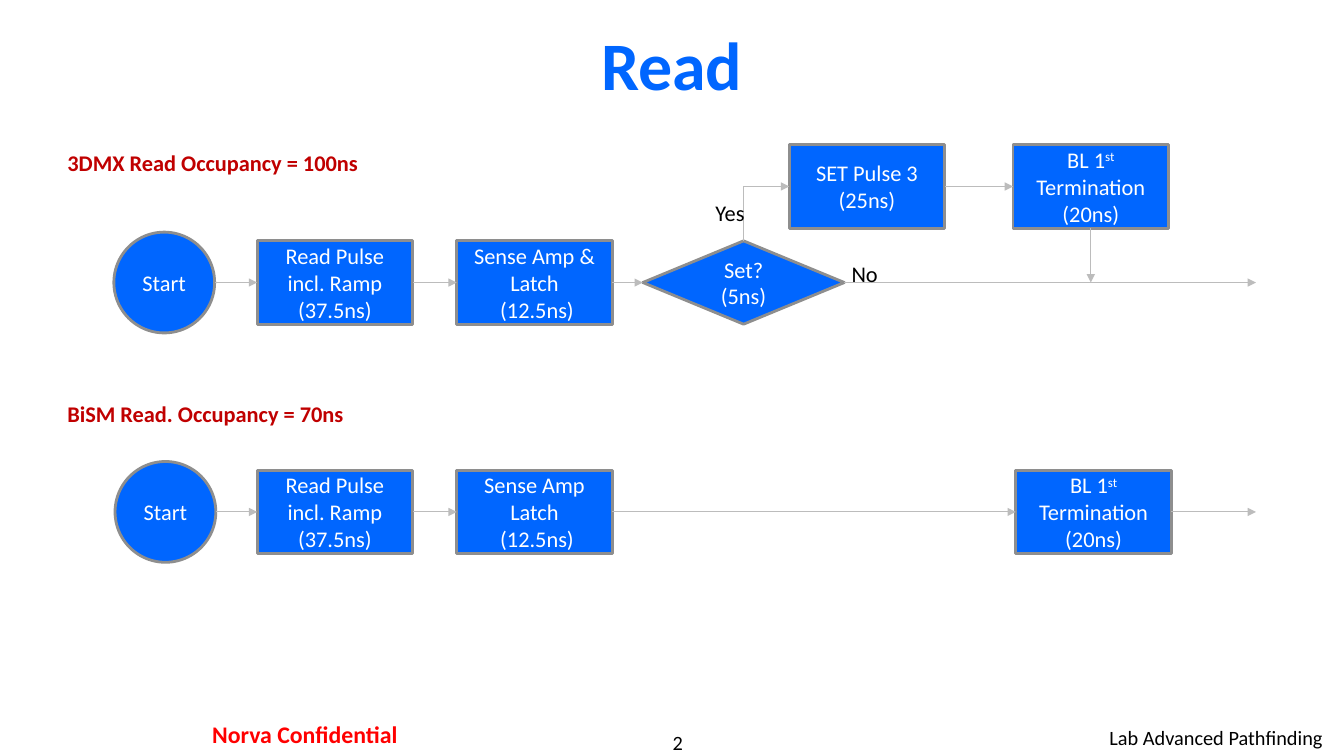
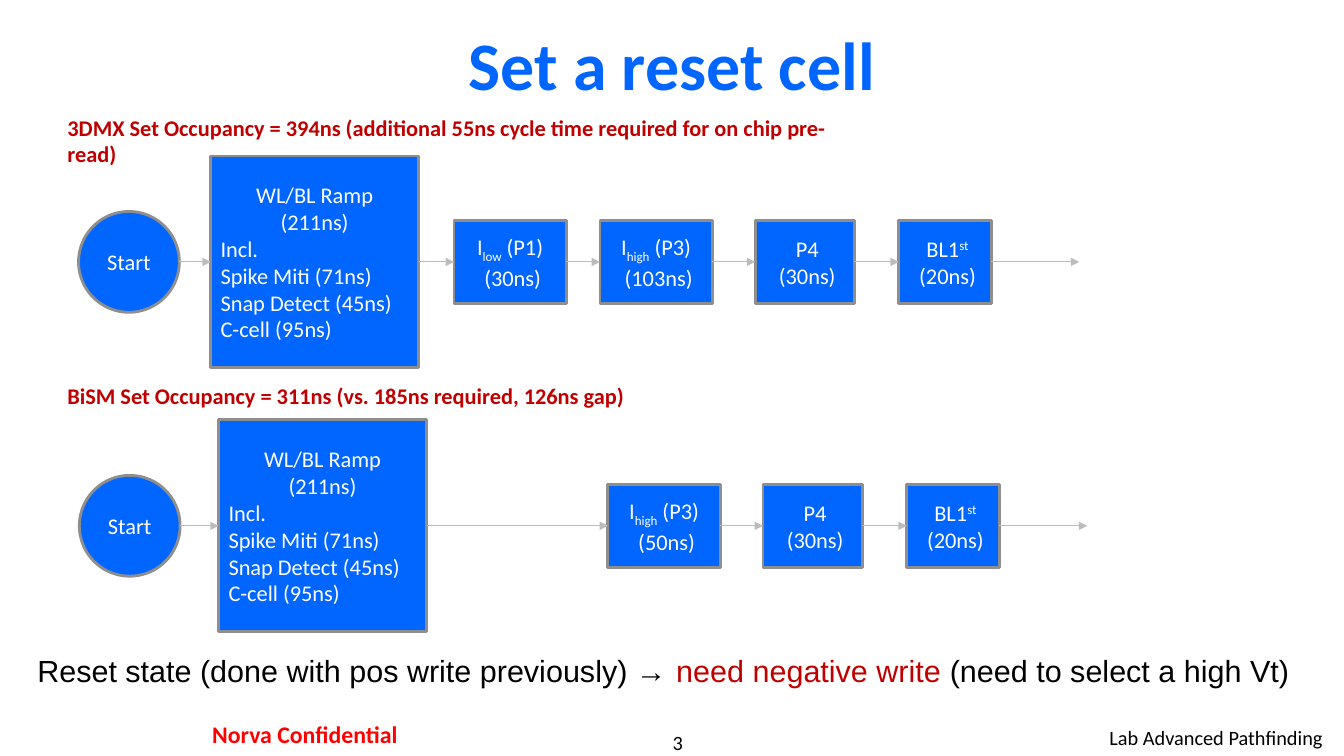
"""Build two slides that compare read and set flows for two memory types."""
from dataclasses import dataclass

from lxml import etree
from pptx import Presentation
from pptx.dml.color import RGBColor
from pptx.enum.shapes import MSO_CONNECTOR, MSO_SHAPE
from pptx.enum.text import MSO_ANCHOR, PP_ALIGN
from pptx.oxml.ns import qn
from pptx.util import Cm, Pt

STRAIGHT = MSO_CONNECTOR.STRAIGHT
ELBOW = MSO_CONNECTOR.ELBOW
OVAL = MSO_SHAPE.OVAL
RECTANGLE = MSO_SHAPE.RECTANGLE
DIAMOND = MSO_SHAPE.DIAMOND
MIDDLE = MSO_ANCHOR.MIDDLE
LEFT, CENTER, RIGHT = PP_ALIGN.LEFT, PP_ALIGN.CENTER, PP_ALIGN.RIGHT
TOP_SITE, LEFT_SITE, BOTTOM_SITE, RIGHT_SITE = range(4)
TITLE_ONLY = 5


@dataclass(frozen=True)
class Theme:
    font: str = "Calibri"
    conclusion_font: str = "Arial"
    blue: RGBColor = RGBColor(0x00, 0x66, 0xFF)
    border: RGBColor = RGBColor(0x8E, 0x8E, 0x8E)
    arrow: RGBColor = RGBColor(0xBC, 0xBC, 0xBC)
    accent: RGBColor = RGBColor(0xC0, 0x00, 0x00)
    warning: RGBColor = RGBColor(0xFF, 0x00, 0x00)
    black: RGBColor = RGBColor(0x00, 0x00, 0x00)
    white: RGBColor = RGBColor(0xFF, 0xFF, 0xFF)
    title_size: float = 48.5
    conclusion_size: float = 21.8
    notice_size: float = 17
    body_size: float = 16
    footer_size: float = 14.5
    border_width: float = 2
    arrow_width: float = 0.75


THEME = Theme()

KINDS = {
    "start": (OVAL, 2.54, 2.54),
    "step": (RECTANGLE, 3.92, 2.1),
    "decision": (DIAMOND, 5.08, 2.1),
    "ramp": (RECTANGLE, 5.24, 5.34),
    "pulse": (RECTANGLE, 2.83, 2.1),
    "p4": (RECTANGLE, 2.5, 2.1),
    "bl": (RECTANGLE, 2.33, 2.1),
}

ST = ("st", 30000)
LOW = ("low", -25000)
HIGH = ("high", -25000)
START = [["Start"]]
READ_PULSE = [["Read Pulse incl. Ramp"], ["(37.5ns)"]]
TERMINATION = [["BL 1", ST, " Termination (20ns)"]]
RAMP = [["WL/BL Ramp"], ["(211ns)"]]
RAMP_DETAILS = ["Incl.", "Spike Miti (71ns)", "Snap Detect (45ns)", "C-cell (95ns)"]
P4 = [[" P4"], [" (30ns)"]]
BL1 = [[" BL1", ST], [" (20ns)"]]

SLIDES = [
    {
        "title": "Read",
        "flows": [
            {
                "heading": "3DMX Read Occupancy = 100ns",
                "heading_top": 3.63,
                "axis": 7.12,
                "nodes": [
                    ("start", 2.87, START),
                    ("step", 6.48, READ_PULSE),
                    ("step", 11.51, [["Sense Amp &"], ["Latch"], [" (12.5ns)"]]),
                    ("decision", 16.2, [["Set? (5ns)"]]),
                ],
                "exit": 31.65,
                "branch": {
                    "axis": 4.7,
                    "nodes": [
                        ("step", 19.89, [["SET Pulse 3 (25ns)"]]),
                        ("step", 25.53, TERMINATION),
                    ],
                    "labels": [("Yes", 17.78, 4.9, 1.24), ("No", 21.21, 6.43, 1.19)],
                },
            },
            {
                "heading": "BiSM Read. Occupancy = 70ns",
                "heading_top": 9.96,
                "axis": 12.9,
                "nodes": [
                    ("start", 2.9, START),
                    ("step", 6.48, READ_PULSE),
                    ("step", 11.51, [["Sense Amp Latch"], [" (12.5ns)"]]),
                    ("step", 25.6, TERMINATION),
                ],
                "exit": 31.65,
            },
        ],
        "conclusion": [],
    },
    {
        "title": "Set a reset cell",
        "flows": [
            {
                "heading": "3DMX Set Occupancy = 394ns (additional 55ns cycle time "
                           "required for on chip pre-read)",
                "heading_top": 2.74,
                "axis": 6.6,
                "nodes": [
                    ("start", 1.98, START),
                    ("ramp", 5.31, RAMP),
                    ("pulse", 11.44, [["I", LOW, " (P1)"], [" (30ns)"]]),
                    ("pulse", 15.12, [["I", HIGH, " (P3)"], [" (103ns)"]]),
                    ("p4", 19.03, P4),
                    ("bl", 22.65, BL1),
                ],
                "exit": 27.2,
            },
            {
                "heading": "BiSM Set Occupancy = 311ns (vs. 185ns required, 126ns gap)",
                "heading_top": 9.5,
                "axis": 13.25,
                "nodes": [
                    ("start", 2, START),
                    ("ramp", 5.51, RAMP),
                    ("pulse", 15.32, [["I", HIGH, " (P3)"], [" (50ns)"]]),
                    ("p4", 19.23, P4),
                    ("bl", 22.85, BL1),
                ],
                "exit": 27.4,
            },
        ],
        "conclusion": [
            ("Reset state (done with pos write previously) → ", THEME.black),
            ("need negative write ", THEME.accent),
            ("(need to select a high Vt)", THEME.black),
        ],
    },
]

FIRST_NUMBER = 2
CONFIDENTIAL = "Norva Confidential"
DEPARTMENT = "Lab Advanced Pathfinding"


def add_run(paragraph, text, size, color, bold=False, font=THEME.font):
    run = paragraph.add_run()
    run.text = text
    run.font.name = font
    run.font.size = Pt(size)
    run.font.bold = bold
    run.font.color.rgb = color
    return run


def add_label(slide, box, runs, size, align=LEFT, bold=False, wrap=False, font=THEME.font):
    frame = slide.shapes.add_textbox(*map(Cm, box)).text_frame
    frame.word_wrap = wrap
    paragraph = frame.paragraphs[0]
    paragraph.alignment = align
    for text, color in runs:
        add_run(paragraph, text, size, color, bold, font)
    return frame


def add_node(slide, axis, kind, left, lines):
    outline, width, height = KINDS[kind]
    node = slide.shapes.add_shape(
        outline, Cm(left), Cm(axis - height / 2), Cm(width), Cm(height))
    node.shadow.inherit = False
    node.fill.solid()
    node.fill.fore_color.rgb = THEME.blue
    node.line.color.rgb = THEME.border
    node.line.width = Pt(THEME.border_width)
    frame = node.text_frame
    frame.word_wrap = True
    frame.vertical_anchor = MIDDLE
    details = [[line] for line in RAMP_DETAILS] if kind == "ramp" else []
    for index, parts in enumerate(lines + details):
        paragraph = frame.add_paragraph() if index else frame.paragraphs[0]
        paragraph.alignment = CENTER if index < len(lines) else LEFT
        for part in parts:
            text, baseline = (part, 0) if isinstance(part, str) else part
            run = add_run(paragraph, text, THEME.body_size, THEME.white)
            if baseline:
                run.font._element.set("baseline", str(baseline))
    return node


def site_point(node, site):
    middle_x, middle_y = node.left + node.width // 2, node.top + node.height // 2
    return {
        TOP_SITE: (middle_x, node.top),
        LEFT_SITE: (node.left, middle_y),
        BOTTOM_SITE: (middle_x, node.top + node.height),
        RIGHT_SITE: (node.left + node.width, middle_y),
    }[site]


def glue(arrow, tag, node, site):
    step = 2 if node.auto_shape_type == OVAL else 1
    end = etree.SubElement(arrow._element.nvCxnSpPr.cNvCxnSpPr, qn(tag))
    end.set("id", str(node.shape_id))
    end.set("idx", str(site * step))


def add_arrow(slide, source, out_site, target=None, point=None):
    x1, y1 = site_point(source, out_site)
    x2, y2 = site_point(target, LEFT_SITE) if target else point
    if out_site == TOP_SITE:
        middle_x, middle_y = (x1 + x2) // 2, (y1 + y2) // 2
        half_rise, half_run = (y1 - y2) // 2, (x2 - x1) // 2
        arrow = slide.shapes.add_connector(
            ELBOW, middle_x + half_rise, middle_y + half_run,
            middle_x - half_rise, middle_y - half_run)
        properties = arrow._element.spPr
        properties.find(qn("a:prstGeom")).set("prst", "bentConnector2")
        properties.find(qn("a:xfrm")).set("rot", "5400000")
    else:
        arrow = slide.shapes.add_connector(STRAIGHT, x1, y1, x2, y2)
    glue(arrow, "a:stCxn", source, out_site)
    if target:
        glue(arrow, "a:endCxn", target, LEFT_SITE)
    arrow.line.color.rgb = THEME.arrow
    arrow.line.width = Pt(THEME.arrow_width)
    properties = arrow._element.spPr
    etree.SubElement(properties.find(qn("a:ln")), qn("a:tailEnd")).set("type", "triangle")
    etree.SubElement(properties, qn("a:effectLst"))


def add_chain(slide, axis, nodes):
    chain = [add_node(slide, axis, *node) for node in nodes]
    for source, target in zip(chain, chain[1:]):
        add_arrow(slide, source, RIGHT_SITE, target)
    return chain


def add_flow(slide, flow):
    add_label(slide, (1.45, flow["heading_top"], 20.8, 0.94),
              [(flow["heading"], THEME.accent)], THEME.body_size, bold=True, wrap=True)
    axis = flow["axis"]
    last = add_chain(slide, axis, flow["nodes"])[-1]
    add_arrow(slide, last, RIGHT_SITE, point=(Cm(flow["exit"]), Cm(axis)))
    branch = flow.get("branch")
    if branch:
        detour = add_chain(slide, branch["axis"], branch["nodes"])
        add_arrow(slide, last, TOP_SITE, detour[0])
        drop_x = site_point(detour[-1], BOTTOM_SITE)[0]
        add_arrow(slide, detour[-1], BOTTOM_SITE, point=(drop_x, Cm(axis)))
        for text, left, top, width in branch["labels"]:
            add_label(slide, (left, top, width, 0.94), [(text, THEME.black)], THEME.body_size)


def add_title(slide, text):
    title = slide.shapes.title
    title.left, title.top, title.width, title.height = map(Cm, (2.54, 0.43, 28.78, 2.34))
    title.text_frame.vertical_anchor = MIDDLE
    paragraph = title.text_frame.paragraphs[0]
    paragraph.alignment = CENTER
    add_run(paragraph, text, THEME.title_size, THEME.blue, bold=True)


def add_footer(slide, number):
    page = add_label(slide, (14.12, 18.39, 5.92, 0.61), [(str(number), THEME.black)],
                     THEME.footer_size, CENTER, wrap=True)
    page.margin_left = page.margin_right = page.margin_top = page.margin_bottom = 0
    add_label(slide, (22.43, 18.16, 11.15, 0.89), [(DEPARTMENT, THEME.black)],
              THEME.footer_size, RIGHT, wrap=True)
    add_label(slide, (3.94, 18.01, 7.49, 1), [(CONFIDENTIAL, THEME.warning)],
              THEME.notice_size, CENTER, bold=True, wrap=True)


def main():
    deck = Presentation()
    deck.slide_width, deck.slide_height = Cm(33.87), Cm(19.05)
    for number, content in enumerate(SLIDES, FIRST_NUMBER):
        slide = deck.slides.add_slide(deck.slide_layouts[TITLE_ONLY])
        add_title(slide, content["title"])
        for flow in content["flows"]:
            add_flow(slide, flow)
        if content["conclusion"]:
            add_label(slide, (0.69, 16.31, 32.46, 1.19), content["conclusion"],
                      THEME.conclusion_size, font=THEME.conclusion_font)
        add_footer(slide, number)
    deck.save("out.pptx")


if __name__ == "__main__":
    main()
